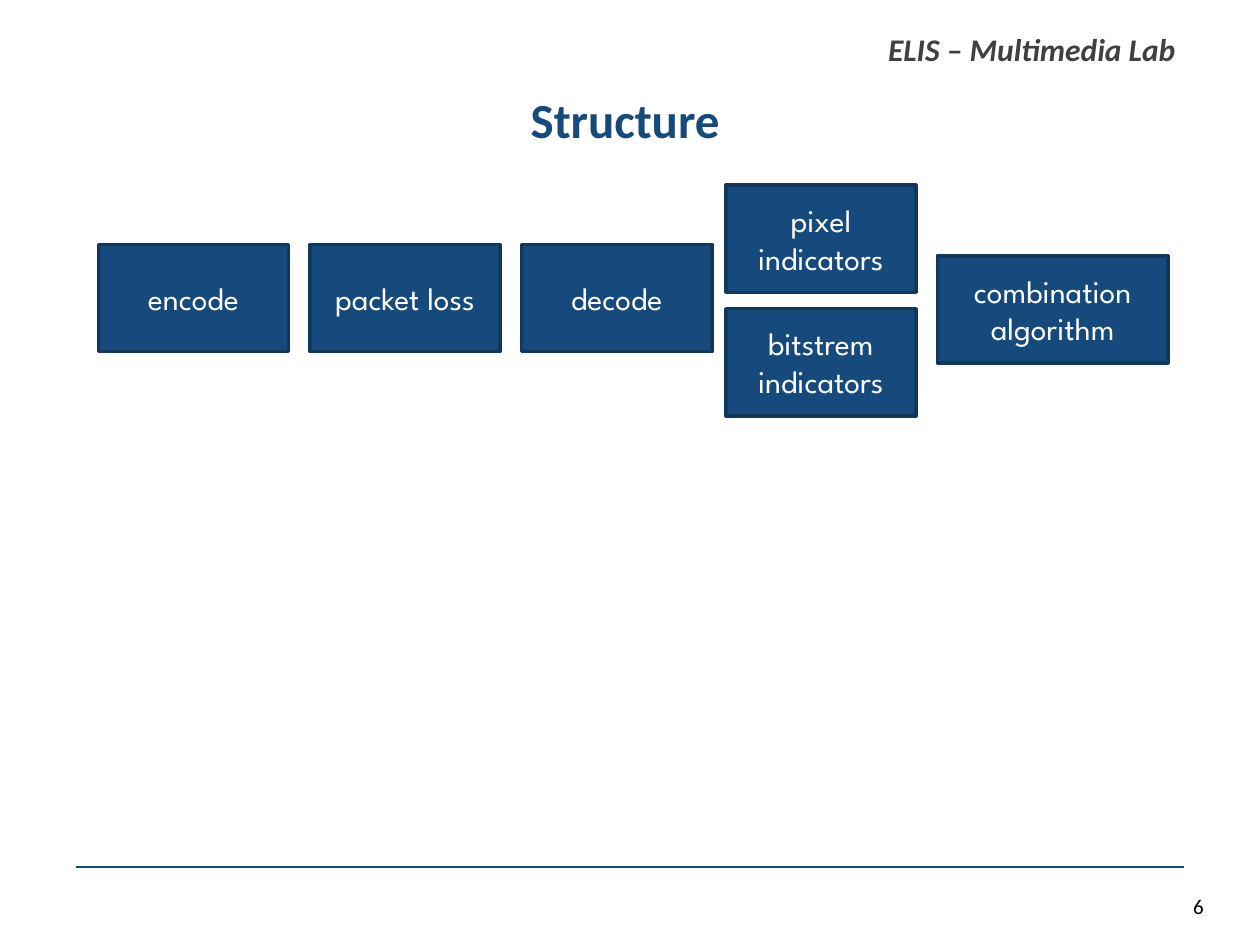
import dataclasses

import lxml.etree
import pptx
import pptx.dml.color
import pptx.enum.shapes
import pptx.enum.text
import pptx.oxml.ns
import pptx.util

ALIGN = pptx.enum.text.PP_ALIGN
ANCHOR = pptx.enum.text.MSO_ANCHOR
WIDTH, HEIGHT = 10, 7.5


@dataclasses.dataclass(frozen=True)
class Theme:
    blue: str = "164A7C"
    edge: str = "10375C"
    gray: str = "404040"
    black: str = "000000"
    white: str = "FFFFFF"
    head_font: str = "Calibri"
    body_font: str = "League Spartan"
    title_size: int = 28
    body_size: int = 18
    number_size: int = 12
    edge_width: float = 2
    rule_width: float = 1.5


THEME = Theme()


def inches(*values):
    return [pptx.util.Inches(value) for value in values]


def rgb(value):
    return pptx.dml.color.RGBColor.from_string(value)


def write(shape, text, color, align, frame_format, font_format):
    """Fill a shape with one formatted paragraph."""
    frame = shape.text_frame
    for name, value in frame_format.items():
        setattr(frame, name, value)
    para = frame.paragraphs[0]
    para.alignment = align
    span = para.add_run()
    span.text = text
    for name, value in font_format.items():
        setattr(span.font, name, value)
    span.font.color.rgb = rgb(color)


def add_header(page, box):
    # Lab name at the top right
    label = page.shapes.add_textbox(*inches(*box))
    write(label, "ELIS – Multimedia Lab", THEME.gray, ALIGN.JUSTIFY,
          {"word_wrap": False},
          {"name": THEME.head_font, "size": pptx.util.Pt(THEME.body_size),
           "bold": True, "italic": True})


def add_title(page, box):
    title = page.shapes.title
    title.left, title.top, title.width, title.height = inches(*box)
    write(title, "Structure ", THEME.blue, ALIGN.CENTER,
          {"word_wrap": True, "vertical_anchor": ANCHOR.MIDDLE},
          {"name": THEME.head_font, "size": pptx.util.Pt(THEME.title_size),
           "bold": True})


def add_block(page, text, box):
    block = page.shapes.add_shape(
        pptx.enum.shapes.MSO_SHAPE.RECTANGLE, *inches(*box))
    block.shadow.inherit = False
    block.fill.solid()
    block.fill.fore_color.rgb = rgb(THEME.blue)
    block.line.color.rgb = rgb(THEME.edge)
    block.line.width = pptx.util.Pt(THEME.edge_width)
    write(block, text, THEME.white, ALIGN.CENTER,
          {"word_wrap": True, "vertical_anchor": ANCHOR.MIDDLE},
          {"name": THEME.body_font, "size": pptx.util.Pt(THEME.body_size)})


def add_pipeline(page, box):
    left, top, width, height = box
    gap = 0.17
    block_height = 0.85
    block_width = 1.51
    pitch = block_width + gap

    # Transmission chain, one block per column
    for column, text in enumerate(("encode", "packet loss", "decode")):
        add_block(page, text, (left + column * pitch, top + 0.47,
                               block_width, block_height))

    # Two indicators, stacked over the full height
    stack_left = left + 3 * pitch - 0.06
    lower_top = top + height - block_height
    for text, block_top in (("bitstrem indicators", lower_top),
                            ("pixel indicators", top)):
        add_block(page, text, (stack_left, block_top, block_width, block_height))

    # Combination takes the rest of the width
    last_left = stack_left + pitch
    add_block(page, "combination algorithm",
              (last_left, top + 0.56, left + width - last_left, block_height))


def add_footer(page, box):
    left, top, width, height = box

    # Rule across the foot of the page
    rule = page.shapes.add_connector(
        pptx.enum.shapes.MSO_CONNECTOR.STRAIGHT,
        *inches(left, top, left + width, top))
    rule.line.color.rgb = rgb(THEME.blue)
    rule.line.width = pptx.util.Pt(THEME.rule_width)
    lxml.etree.SubElement(rule.element.spPr, pptx.oxml.ns.qn("a:effectLst"))

    # Page number beyond the right end of the rule
    number = page.shapes.add_textbox(
        *inches(left + width - 0.03, top + 0.16, 0.72, height - 0.16))
    write(number, "6", THEME.black, ALIGN.LEFT, {"word_wrap": True},
          {"name": THEME.head_font, "size": pptx.util.Pt(THEME.number_size)})


def main():
    deck = pptx.Presentation()
    deck.slide_width, deck.slide_height = inches(WIDTH, HEIGHT)
    page = deck.slides.add_slide(deck.slide_layouts.get_by_name("Title Only"))

    margin = 0.06 * WIDTH
    add_header(page, (6.95, 0.19, 2.5, 0.4))
    add_title(page, (0.55, 0.58, 8.91, 0.73))
    add_pipeline(page, (0.78, 1.47, 8.49, 1.83))
    add_footer(page, (margin, 6.88, WIDTH - 2 * margin, 0.46))
    deck.save("out.pptx")


if __name__ == "__main__":
    main()
